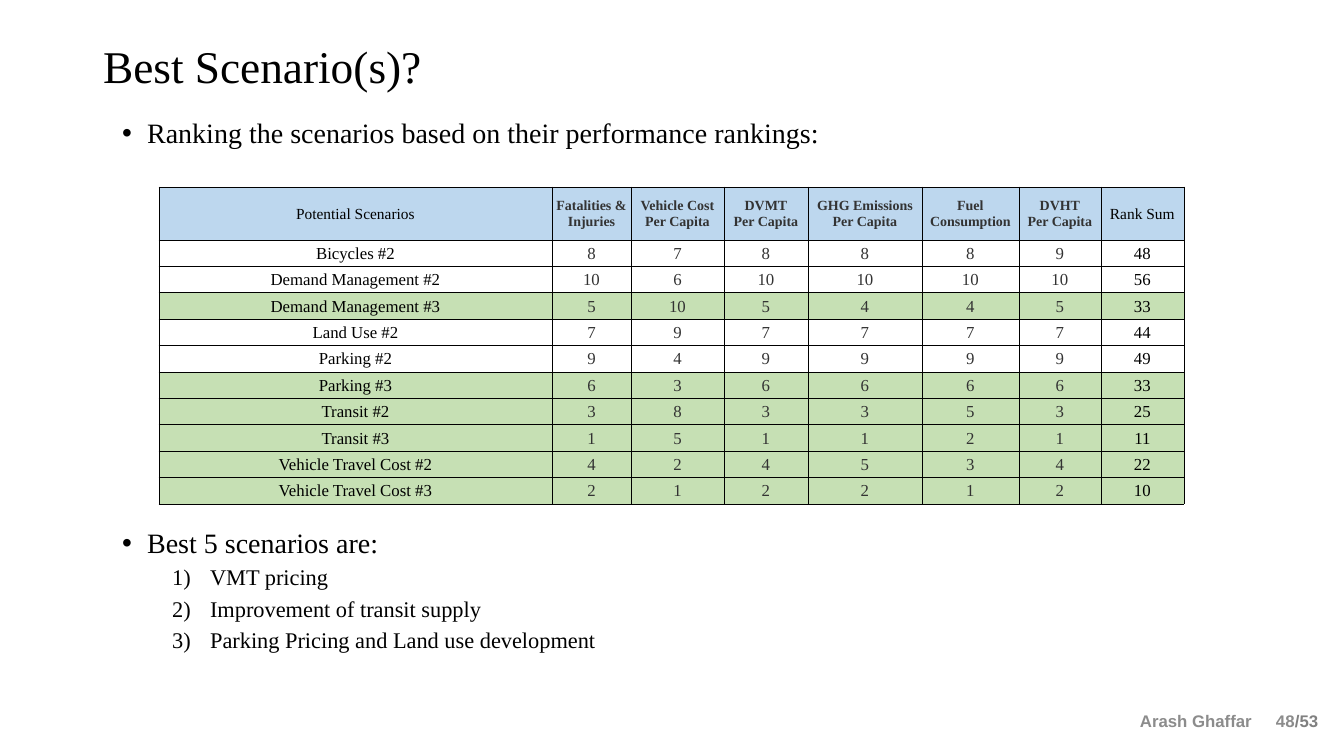
"""Build the slide that ranks the transport scenarios."""
from lxml.etree import SubElement
from pptx import Presentation
from pptx.dml.color import RGBColor
from pptx.enum.text import MSO_ANCHOR as Anchor, MSO_AUTO_SIZE as AutoSize, PP_ALIGN as Align
from pptx.oxml.ns import qn
from pptx.util import Emu, Pt

SERIF, SANS = "Times New Roman", "Arial"
BLACK, DARK = "000000", "333333"
WHITE, BLUE, GREEN = "FFFFFF", "BDD7EE", "C6E0B4"
BEST_LIMIT = 33

HEADERS = ["Potential Scenarios", "Fatalities & Injuries", "Vehicle Cost\nPer Capita",
           "DVMT\nPer Capita", "GHG Emissions\nPer Capita", "Fuel\nConsumption",
           "DVHT\nPer Capita", "Rank Sum"]
COLUMN_WIDTHS = [393, 79, 93, 84, 114, 97, 82, 83]
HEADER_HEIGHT, RANKS_HEIGHT = 53, 264
RANKS = {
    "Bicycles #2": [8, 7, 8, 8, 8, 9],
    "Demand Management #2": [10, 6, 10, 10, 10, 10],
    "Demand Management #3": [5, 10, 5, 4, 4, 5],
    "Land Use #2": [7, 9, 7, 7, 7, 7],
    "Parking #2": [9, 4, 9, 9, 9, 9],
    "Parking #3": [6, 3, 6, 6, 6, 6],
    "Transit #2": [3, 8, 3, 3, 5, 3],
    "Transit #3": [1, 5, 1, 1, 2, 1],
    "Vehicle Travel Cost #2": [4, 2, 4, 5, 3, 4],
    "Vehicle Travel Cost #3": [2, 1, 2, 2, 1, 2],
}
BULLETS = [
    ("Ranking the scenarios based on their performance rankings:", 1, 5),
    ("Best 5 scenarios are:", 1, 271.5),
    ("VMT pricing", 2, 5),
    ("Improvement of transit supply", 2, 5),
    ("Parking Pricing and Land use development", 2, 5),
]


def px(length):
    """Turn pixels into EMU."""
    return Emu(round(length * 914400 / 100.8))


def color(value):
    """Turn a hex string into a colour."""
    return RGBColor.from_string(value)


def place(shape, left, top, width, height):
    """Move and size a shape."""
    shape.left, shape.top, shape.width, shape.height = map(px, (left, top, width, height))


def style(para, size, tint, font=SERIF, bold=False):
    """Format every run of a paragraph."""
    for span in para.runs:
        span.font.name, span.font.size, span.font.bold = font, Pt(size), bold
        span.font.color.rgb = color(tint)


def add_title(page, text):
    """Fill the title placeholder."""
    title = page.shapes.title
    place(title, 93, 40, 1159, 58)
    frame = title.text_frame
    frame.text = text
    frame.auto_size, frame.vertical_anchor = AutoSize.NONE, Anchor.MIDDLE
    para = frame.paragraphs[0]
    para.alignment, para.line_spacing = Align.LEFT, 0.9
    style(para, 32.4, BLACK)


def add_marker(para, level):
    """Give a paragraph its bullet or number and its indent."""
    properties = para._p.get_or_add_pPr()
    margin, hang = (76, 25) if level == 1 else (139, 38)
    properties.set("marL", str(px(margin)))
    properties.set("indent", str(-px(hang)))
    SubElement(properties, qn("a:buFont"), typeface=SANS if level == 1 else SERIF)
    if level == 1:
        SubElement(properties, qn("a:buChar"), char="•")
    else:
        SubElement(properties, qn("a:buAutoNum"), type="arabicParenR")


def add_bullets(page, bullets):
    """Fill the body placeholder with the list."""
    body = page.placeholders[1]
    place(body, 61, 114, 1207, 602)
    frame = body.text_frame
    frame.text = "\n".join(text for text, _, _ in bullets)
    frame.auto_size = AutoSize.NONE
    for para, (_, level, gap) in zip(frame.paragraphs, bullets):
        para.level, para.line_spacing, para.space_before = level, 0.9, Pt(gap)
        add_marker(para, level)
        style(para, 20 if level == 1 else 16, BLACK)


def add_borders(cell):
    """Draw thin black lines round a cell."""
    properties = cell._tc.get_or_add_tcPr()
    for side in ("lnL", "lnR", "lnT", "lnB"):
        line = SubElement(properties, qn(f"a:{side}"), w=str(Pt(0.5)))
        fill = SubElement(line, qn("a:solidFill"))
        SubElement(fill, qn("a:srgbClr"), val=BLACK)


def fill_cell(cell, text, size, tint, background, bold=False):
    """Write and format one table cell."""
    add_borders(cell)
    cell.fill.solid()
    cell.fill.fore_color.rgb = color(background)
    cell.margin_left = cell.margin_right = cell.margin_top = px(1)
    cell.margin_bottom = 0
    cell.vertical_anchor = Anchor.MIDDLE
    cell.text_frame.text = text
    for para in cell.text_frame.paragraphs:
        para.alignment = Align.CENTER
        style(para, size, tint, bold=bold)


def add_ranking(page):
    """Add the table of ranks, with the best scenarios in green."""
    frame = page.shapes.add_table(len(RANKS) + 1, len(HEADERS), px(159), px(187),
                                  px(sum(COLUMN_WIDTHS)), px(HEADER_HEIGHT + RANKS_HEIGHT))
    table = frame.table
    table.first_row = table.horz_banding = False
    for column, width in zip(table.columns, COLUMN_WIDTHS):
        column.width = px(width)
    for row in table.rows:
        row.height = px(RANKS_HEIGHT / len(RANKS))
    table.rows[0].height = px(HEADER_HEIGHT)
    outer = (0, len(HEADERS) - 1)
    for index, text in enumerate(HEADERS):
        size, tint, bold = (11, BLACK, False) if index in outer else (10, DARK, True)
        fill_cell(table.cell(0, index), text, size, tint, BLUE, bold)
    for number, (scenario, ranks) in enumerate(RANKS.items(), 1):
        total = sum(ranks)
        background = GREEN if total <= BEST_LIMIT else WHITE
        for index, value in enumerate([scenario, *ranks, total]):
            tint = BLACK if index in outer else DARK
            fill_cell(table.cell(number, index), str(value), 12, tint, background)


def add_footer_text(page, text, bounds, tint):
    """Add a bold footer text and return its box."""
    box = page.shapes.add_textbox(*map(px, bounds))
    frame = box.text_frame
    frame.text, frame.word_wrap = text, True
    frame.vertical_anchor = Anchor.MIDDLE
    style(frame.paragraphs[0], 12, tint, SANS, True)
    return box


def add_footer(page):
    """Add the author, the page number and the page count."""
    count = add_footer_text(page, "/53", (1285, 706, 44, 30), "808080")
    count.text_frame.word_wrap = False
    author = add_footer_text(page, "Arash Ghaffar\t48", (1002, 701, 302, 40), "8C8C8C")
    author.text_frame.margin_left, author.text_frame.margin_right = px(138), 0
    properties = author.text_frame.paragraphs[0]._p.get_or_add_pPr()
    tabs = SubElement(properties, qn("a:tabLst"))
    SubElement(tabs, qn("a:tab"), pos=str(px(136)), algn="l")


def main():
    """Build and save the deck."""
    deck = Presentation()
    deck.slide_width, deck.slide_height = px(1344), px(756)
    page = deck.slides.add_slide(deck.slide_layouts[1])
    add_title(page, "Best Scenario(s)?")
    add_bullets(page, BULLETS)
    add_footer(page)
    add_ranking(page)
    deck.save("out.pptx")


if __name__ == "__main__":
    main()
